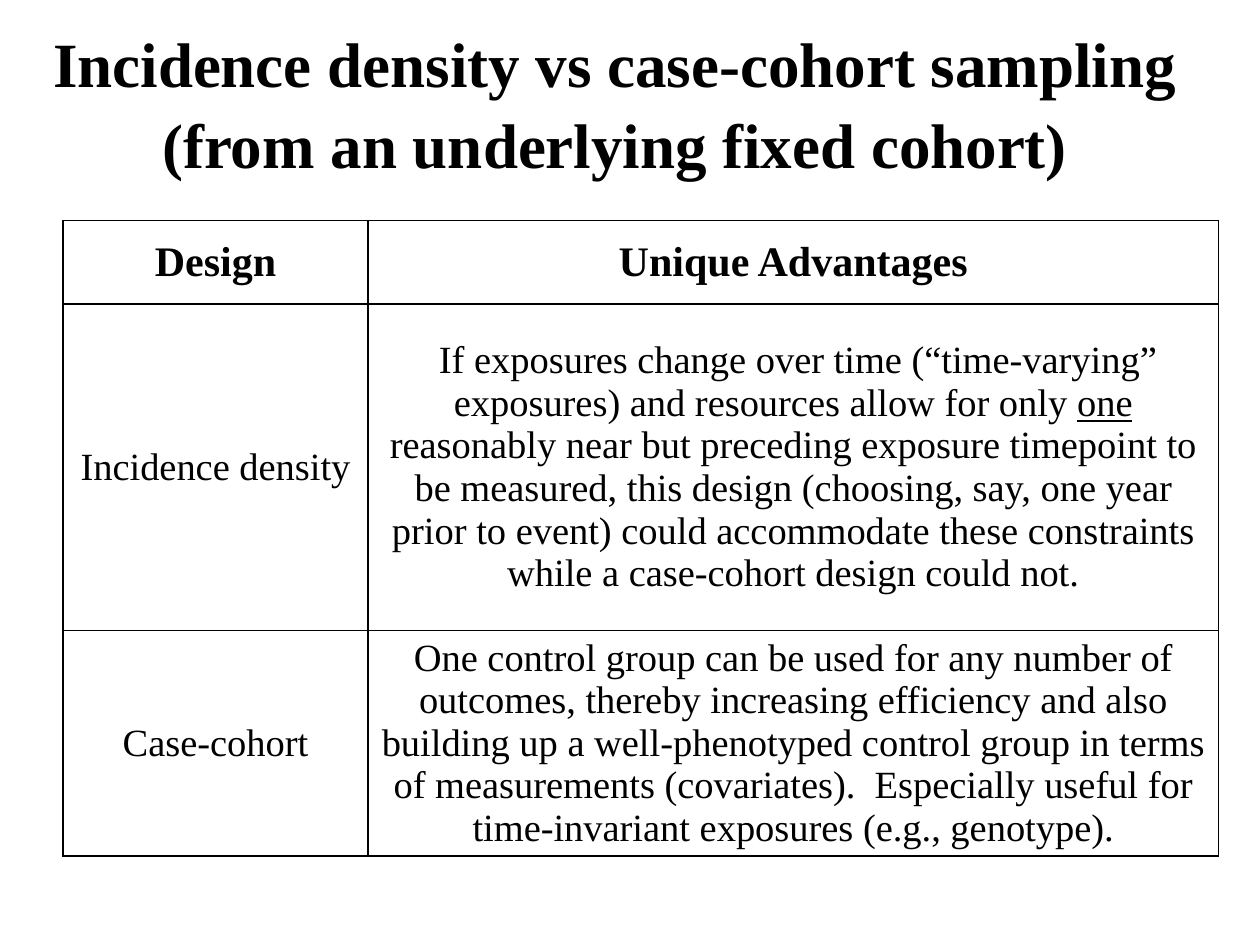
"""Build a slide comparing incidence density and case-cohort sampling."""
from lxml.etree import SubElement
from pptx import Presentation
from pptx.dml.color import RGBColor
from pptx.enum.text import MSO_ANCHOR as Anchor, PP_ALIGN as Align
from pptx.oxml.ns import qn
from pptx.util import Cm, Pt

FONT = "Times New Roman"
COLORS = {"ink": "000000", "paper": "FFFFFF"}
COLUMN_WIDTHS = [6.15, 17.14]
ROW_HEIGHTS = [1.68, 6.58, 4.27]
ROWS = [
    [["Design"], ["Unique Advantages"]],
    [
        ["Incidence density"],
        [
            " If exposures change over time (“time-varying” exposures) and resources allow for only ",
            "one",
            " reasonably near but preceding exposure timepoint to be measured, this design "
            "(choosing, say, one year prior to event) could accommodate these constraints "
            "while a case-cohort design could not.",
        ],
    ],
    [
        ["Case-cohort"],
        [
            "One control group can be used for any number of outcomes, thereby increasing "
            "efficiency and also building up a well-phenotyped control group in terms of "
            "measurements (covariates).  Especially useful for time-invariant exposures "
            "(e.g., genotype)."
        ],
    ],
]


def format_paragraph(paragraph, size, bold):
    paragraph.alignment = Align.CENTER
    for run in paragraph.runs:
        run.font.name = FONT
        run.font.size = Pt(size)
        run.font.bold = bold
        run.font.color.rgb = RGBColor.from_string(COLORS["ink"])


def format_cell(cell):
    cell.vertical_anchor = Anchor.MIDDLE
    properties = cell._tc.get_or_add_tcPr()
    for side in ("lnL", "lnR", "lnT", "lnB"):
        line = SubElement(properties, qn(f"a:{side}"), w=str(Pt(1)))
        fill = SubElement(line, qn("a:solidFill"))
        SubElement(fill, qn("a:srgbClr"), val=COLORS["ink"])
    cell.fill.solid()
    cell.fill.fore_color.rgb = RGBColor.from_string(COLORS["paper"])


presentation = Presentation()
presentation.slide_width, presentation.slide_height = Cm(25.4), Cm(19.05)
slide = presentation.slides.add_slide(presentation.slide_layouts[5])
slide.background.fill.solid()
slide.background.fill.fore_color.rgb = RGBColor.from_string(COLORS["paper"])

title = slide.shapes.title
title.left, title.top, title.width, title.height = Cm(0.43), Cm(0.43), Cm(23.93), Cm(3.18)
title.text_frame.text = "Incidence density vs case-cohort sampling (from an underlying fixed cohort)"
title.text_frame.vertical_anchor = Anchor.MIDDLE
title.text_frame.paragraphs[0].line_spacing = 1.07
format_paragraph(title.text_frame.paragraphs[0], 36, True)

table = slide.shapes.add_table(
    len(ROWS), len(COLUMN_WIDTHS), Cm(1.27), Cm(4.45), Cm(sum(COLUMN_WIDTHS)), Cm(sum(ROW_HEIGHTS))
).table
for column, width in zip(table.columns, COLUMN_WIDTHS):
    column.width = Cm(width)
for row, height in zip(table.rows, ROW_HEIGHTS):
    row.height = Cm(height)

for row_index, texts in enumerate(ROWS):
    is_header = row_index == 0
    for column_index, parts in enumerate(texts):
        cell = table.cell(row_index, column_index)
        paragraph = cell.text_frame.paragraphs[0]
        for part in parts:
            run = paragraph.add_run()
            run.text = part
            run.font.underline = part == "one"
        format_paragraph(paragraph, 24 if is_header else 22, is_header)
        format_cell(cell)

presentation.save("out.pptx")
